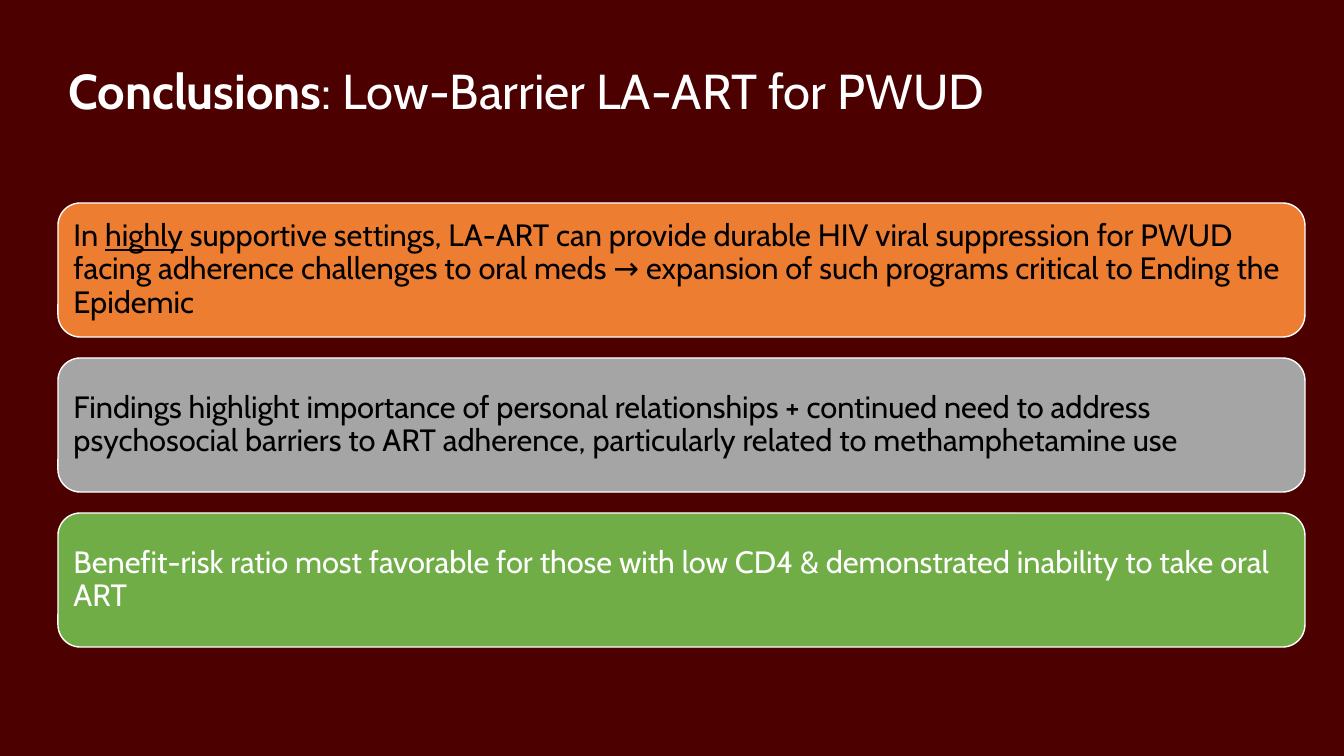
"""Build the conclusions slide with three stacked statement cards."""
from dataclasses import dataclass

from pptx import Presentation
from pptx.dml.color import RGBColor as Rgb
from pptx.enum.shapes import MSO_SHAPE as Shape
from pptx.enum.text import MSO_ANCHOR as Anchor, MSO_AUTO_SIZE as Fit, PP_ALIGN as Align
from pptx.slide import Slide
from pptx.text.text import TextFrame
from pptx.util import Emu, Pt

SCALE = 914400 / 100.8


@dataclass(frozen=True)
class Theme:
    font: str = "Cabin"
    back: str = "4C0000"
    white: str = "FFFFFF"
    black: str = "000000"
    orange: str = "ED7D31"
    gray: str = "A5A5A5"
    green: str = "70AD47"
    head: int = 35
    body: int = 22
    edge: int = 1


@dataclass(frozen=True)
class Span:
    text: str
    bold: bool = False
    under: bool = False


@dataclass(frozen=True)
class Card:
    fill: str
    ink: str
    spans: tuple[Span, ...]


THEME = Theme()
LEFT, WIDTH = 58, 1247
TITLE_TOP, TITLE_HIGH = 40, 85
CARD_TOP, CARD_HIGH, STEP = 203, 134, 155
INSET = 9

TITLE = (Span("Conclusions", bold=True), Span(": Low-Barrier LA-ART for PWUD"))
CARDS = (
    Card(THEME.orange, THEME.black, (
        Span("In "),
        Span("highly", under=True),
        Span(" supportive settings, LA-ART can provide durable HIV viral suppression "
             "for PWUD facing adherence challenges to oral meds → expansion of such "
             "programs critical to Ending the Epidemic"),
    )),
    Card(THEME.gray, THEME.black, (
        Span("Findings highlight importance of personal relationships + continued need "
             "to address psychosocial barriers to ART adherence, particularly related "
             "to methamphetamine use"),
    )),
    Card(THEME.green, THEME.white, (
        Span("Benefit-risk ratio most favorable for those with low CD4 & demonstrated "
             "inability to take oral ART"),
    )),
)


def px(count: int) -> Emu:
    """Turn pixels into EMU."""
    return Emu(round(count * SCALE))


def color(code: str) -> Rgb:
    """Turn a hex code into a colour."""
    return Rgb.from_string(code)


def write(frame: TextFrame, spans: tuple[Span, ...], size: int, ink: str, anchor: Anchor) -> None:
    """Fill a text frame with one left-aligned paragraph of spans."""
    frame.word_wrap = True
    frame.auto_size = Fit.NONE
    frame.vertical_anchor = anchor
    para = frame.paragraphs[0]
    para.alignment = Align.LEFT
    para.line_spacing = 0.9
    for span in spans:
        run = para.add_run()
        run.text = span.text
        font = run.font
        font.name = THEME.font
        font.size = Pt(size)
        font.bold = span.bold
        font.underline = span.under
        font.color.rgb = color(ink)


def add_title(slide: Slide) -> None:
    """Place and write the title."""
    title = slide.shapes.title
    title.left, title.top = px(LEFT), px(TITLE_TOP)
    title.width, title.height = px(WIDTH), px(TITLE_HIGH)
    write(title.text_frame, TITLE, THEME.head, THEME.white, Anchor.BOTTOM)


def add_card(slide: Slide, card: Card, top: int) -> None:
    """Draw one rounded card with its statement."""
    box = slide.shapes.add_shape(
        Shape.ROUNDED_RECTANGLE, px(LEFT), px(top), px(WIDTH), px(CARD_HIGH))
    box.shadow.inherit = False
    box.fill.solid()
    box.fill.fore_color.rgb = color(card.fill)
    box.line.color.rgb = color(THEME.white)
    box.line.width = Pt(THEME.edge)
    frame = box.text_frame
    frame.margin_left = frame.margin_right = px(INSET)
    frame.margin_top = frame.margin_bottom = px(INSET)
    write(frame, card.spans, THEME.body, card.ink, Anchor.MIDDLE)


def main() -> None:
    """Build and save the deck."""
    deck = Presentation()
    deck.slide_width, deck.slide_height = px(1344), px(756)
    slide = deck.slides.add_slide(deck.slide_layouts[5])
    slide.background.fill.solid()
    slide.background.fill.fore_color.rgb = color(THEME.back)
    add_title(slide)
    for row, card in enumerate(CARDS):
        add_card(slide, card, CARD_TOP + row * STEP)
    deck.save("out.pptx")


if __name__ == "__main__":
    main()
